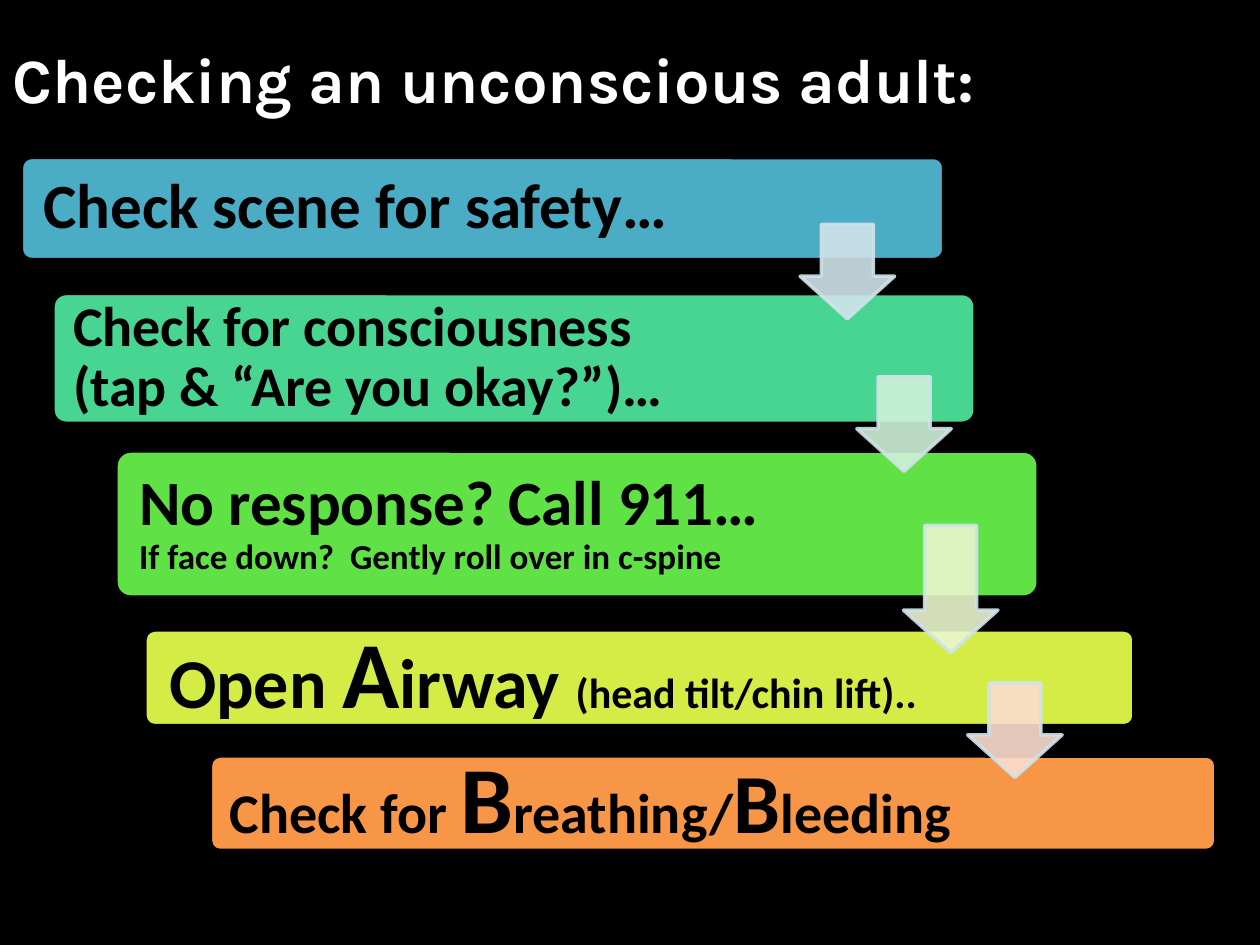
from pptx import Presentation
from pptx.dml.color import RGBColor
from pptx.enum.shapes import MSO_SHAPE
from pptx.enum.text import MSO_ANCHOR, PP_ALIGN
from pptx.oxml.ns import qn
from pptx.util import Inches, Pt
from lxml import etree

ROUNDED = MSO_SHAPE.ROUNDED_RECTANGLE
DOWN_ARROW = MSO_SHAPE.DOWN_ARROW
MIDDLE = MSO_ANCHOR.MIDDLE
LEFT = PP_ALIGN.LEFT
LINE_BREAK = "\v"
BLACK = "000000"
WHITE = "FFFFFF"
ARROW_LINE = "D0E3EA"
CORNER = 0.1
CORNER_INSET = CORNER * 0.29


def color(value):
    return RGBColor.from_string(value)


class SlideBuilder:
    title_font = "Karla"
    body_font = "Calibri"
    line_width = Pt(2)

    def __init__(self, presentation):
        self.slide = presentation.slides.add_slide(presentation.slide_layouts[5])
        fill = self.slide.background.fill
        fill.solid()
        fill.fore_color.rgb = color(BLACK)

    def run(self, paragraph, text, size, font_name, font_color):
        run = paragraph.add_run()
        run.text = text
        run.font.size = Pt(size)
        run.font.name = font_name
        run.font.bold = True
        run.font.color.rgb = color(font_color)

    def title(self, text):
        title = self.slide.shapes.title
        title.left, title.top = Inches(0), Inches(0)
        title.width, title.height = Inches(9.33), Inches(1.25)
        title.text_frame.vertical_anchor = MIDDLE
        paragraph = title.text_frame.paragraphs[0]
        paragraph.alignment = LEFT
        self.run(paragraph, text, 36, self.title_font, WHITE)

    def shape(self, kind, left, top, width, height, fill, line, adjustments):
        shape = self.slide.shapes.add_shape(
            kind, Inches(left), Inches(top), Inches(width), Inches(height))
        shape.shadow.inherit = False
        shape.fill.solid()
        shape.fill.fore_color.rgb = color(fill)
        shape.line.color.rgb = color(line)
        shape.line.width = self.line_width
        for index, value in enumerate(adjustments):
            shape.adjustments[index] = value
        return shape

    def text(self, left, top, width, height, margin, runs):
        box = self.slide.shapes.add_textbox(
            Inches(left), Inches(top), Inches(width), Inches(height))
        frame = box.text_frame
        frame.word_wrap = True
        frame.vertical_anchor = MIDDLE
        frame.margin_left = frame.margin_right = Inches(margin)
        frame.margin_top = frame.margin_bottom = Inches(margin)
        paragraph = frame.paragraphs[0]
        paragraph.alignment = LEFT
        paragraph.line_spacing = 0.9
        for text, size in runs:
            if text == LINE_BREAK:
                paragraph.add_line_break()
            else:
                self.run(paragraph, text, size, self.body_font, BLACK)

    def step(self, left, top, width, height, fill, text_width, margin, runs):
        self.shape(ROUNDED, left, top, width, height, fill, BLACK, [CORNER])
        inset = height * CORNER_INSET
        self.text(left + inset, top + inset, text_width, height - 2 * inset,
                  margin, runs)

    def arrow(self, left, top, height, fill):
        arrow = self.shape(DOWN_ARROW, left, top, 0.75, height, fill,
                           ARROW_LINE, [0.55, 0.45])
        for element in arrow._element.spPr.iter(qn("a:srgbClr")):
            etree.SubElement(element, qn("a:alpha")).set("val", "90000")


STEPS = [
    (0.17, 1.25, 7.32, 0.81, "4BACC6", 5.95, 0.15,
     [("Check scene for safety…", 36)]),
    (0.42, 2.33, 7.32, 1.03, "48D491", 5.96, 0.13,
     [("Check for consciousness", 32), (LINE_BREAK, 32),
      ("(tap & “Are you okay?”)…", 32)]),
    (0.92, 3.58, 7.32, 1.16, "60E146", 5.95, 0.15,
     [("No response? Call 911…", 36), (LINE_BREAK, 36),
      ("If face down?  Gently roll over in c-spine", 20)]),
    (1.15, 5, 7.85, 0.76, "D5EC46", 6.42, 0.17,
     [("Open ", 40), ("A", 54), ("irway ", 40), ("(head tilt/chin lift)..", 24)]),
    (1.67, 6, 7.98, 0.75, "F79646", 6.52, 0.13,
     [("Check for ", 32), ("B", 54), ("reathing/", 32), ("B", 48),
      ("leeding", 32)]),
]

ARROWS = [
    (6.35, 1.78, 0.75, "D0E3EA"),
    (6.8, 2.99, 0.75, "CFF1D9"),
    (7.17, 4.17, 1.01, "EBF7CE"),
    (7.68, 5.42, 0.75, "FCDDCF"),
]


def main():
    presentation = Presentation()
    presentation.slide_width = Inches(10)
    presentation.slide_height = Inches(7.5)
    builder = SlideBuilder(presentation)
    builder.title("Checking an unconscious adult:")
    for step in STEPS:
        builder.step(*step)
    for arrow in ARROWS:
        builder.arrow(*arrow)
    presentation.save("out.pptx")


if __name__ == "__main__":
    main()
